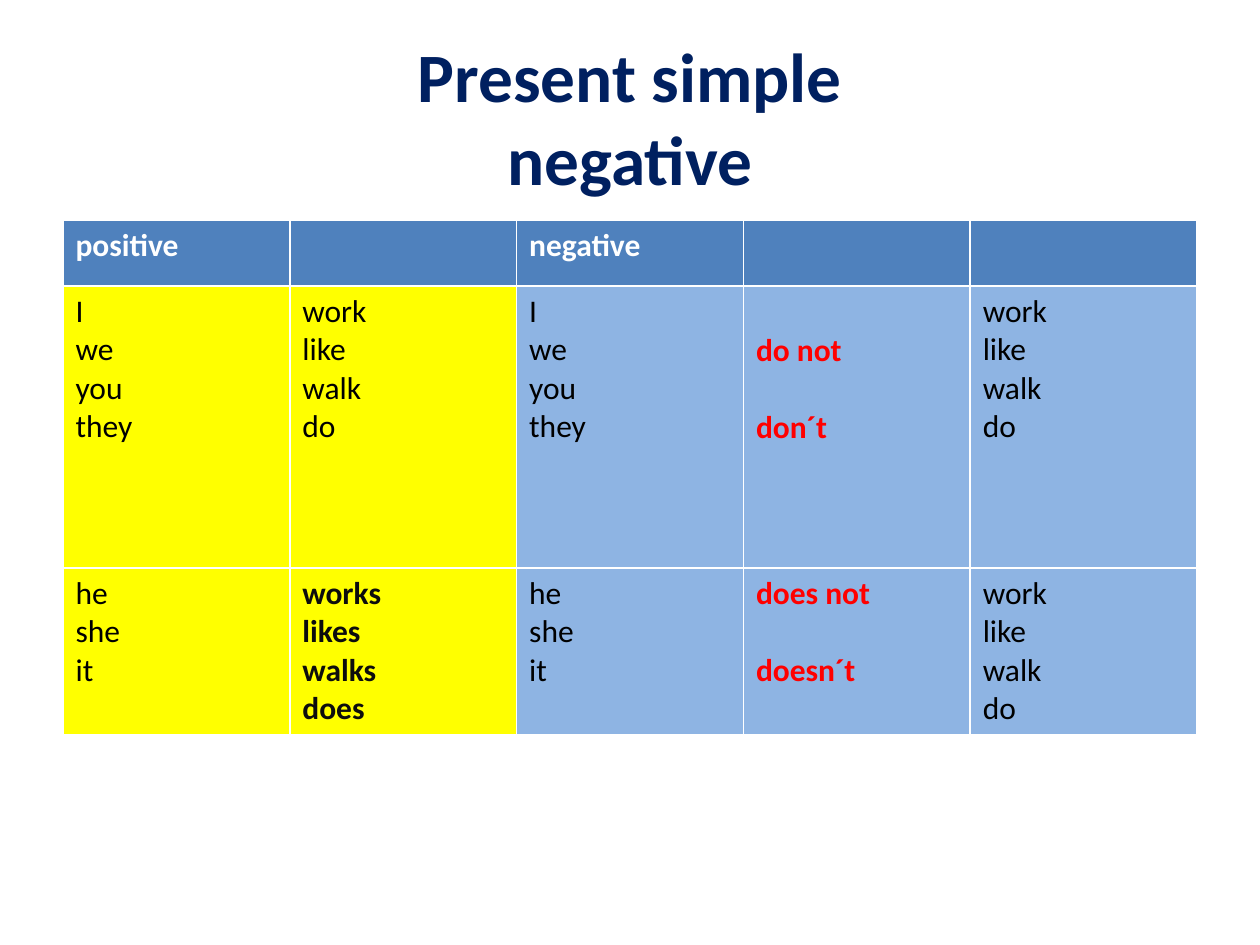
from pptx import Presentation
from pptx.dml.color import RGBColor
from pptx.enum.text import MSO_ANCHOR, PP_ALIGN
from pptx.util import Inches, Pt

YELLOW, LIGHT_BLUE, BLUE = "FFFF00", "8EB4E3", "4F81BD"
BLACK, SOFT_BLACK, RED, WHITE, NAVY = "000000", "0D0D0D", "FF0000", "FFFFFF", "002060"
LINE = 0.31  # height of one line of table text, in inches


def rgb(color):
    return RGBColor.from_string(color)


def write(tf, text, size, color, bold):
    tf.text = text
    for p in tf.paragraphs:
        for r in p.runs:
            r.font.name = "Calibri"
            r.font.size = Pt(size)
            r.font.bold = bold
            r.font.color.rgb = rgb(color)


prs = Presentation()
prs.slide_width, prs.slide_height = Inches(10), Inches(7.5)
s = prs.slides.add_slide(prs.slide_layouts[6])

# Title
tf = s.shapes.add_textbox(Inches(0.5), Inches(0.3), Inches(9), Inches(1.25)).text_frame
tf.word_wrap = True
tf.vertical_anchor = MSO_ANCHOR.MIDDLE
write(tf, "Present simple\vnegative", 39.6, NAVY, True)
tf.paragraphs[0].alignment = PP_ALIGN.CENTER

# Table: the default style supplies the white borders
plural, singular = "I\nwe\nyou\nthey", "he\nshe\nit"
verbs = "work\nlike\nwalk\ndo"
rows = [
    ["positive", "", "negative", "", ""],
    [plural, verbs, plural, "do not\ndon´t", verbs],
    [singular, "works\nlikes\nwalks\ndoes", singular, "does not\ndoesn´t", verbs],
]
heights = [0.52, 2.24, 1.32]
table = s.shapes.add_table(3, 5, Inches(0.5), Inches(1.75), Inches(9),
                           Inches(sum(heights))).table
for i, (texts, height) in enumerate(zip(rows, heights)):
    table.rows[i].height = Inches(height)
    for j, text in enumerate(texts):
        if i == 0:
            fill, color, bold = BLUE, WHITE, True
        else:
            fill = YELLOW if j < 2 else LIGHT_BLUE
            color, bold = (RED, True) if j == 3 else (BLACK, False)
            if (i, j) == (2, 1):
                color, bold = SOFT_BLACK, True
        cell = table.cell(i, j)
        cell.fill.solid()
        cell.fill.fore_color.rgb = rgb(fill)
        write(cell.text_frame, text, 18, color, bold)

# The short forms stand one line below the full negatives
for i in (1, 2):
    table.cell(i, 3).text_frame.paragraphs[1].space_before = Pt(LINE * 72)
table.cell(1, 3).margin_top = Inches(0.05 + LINE)

prs.save("out.pptx")
